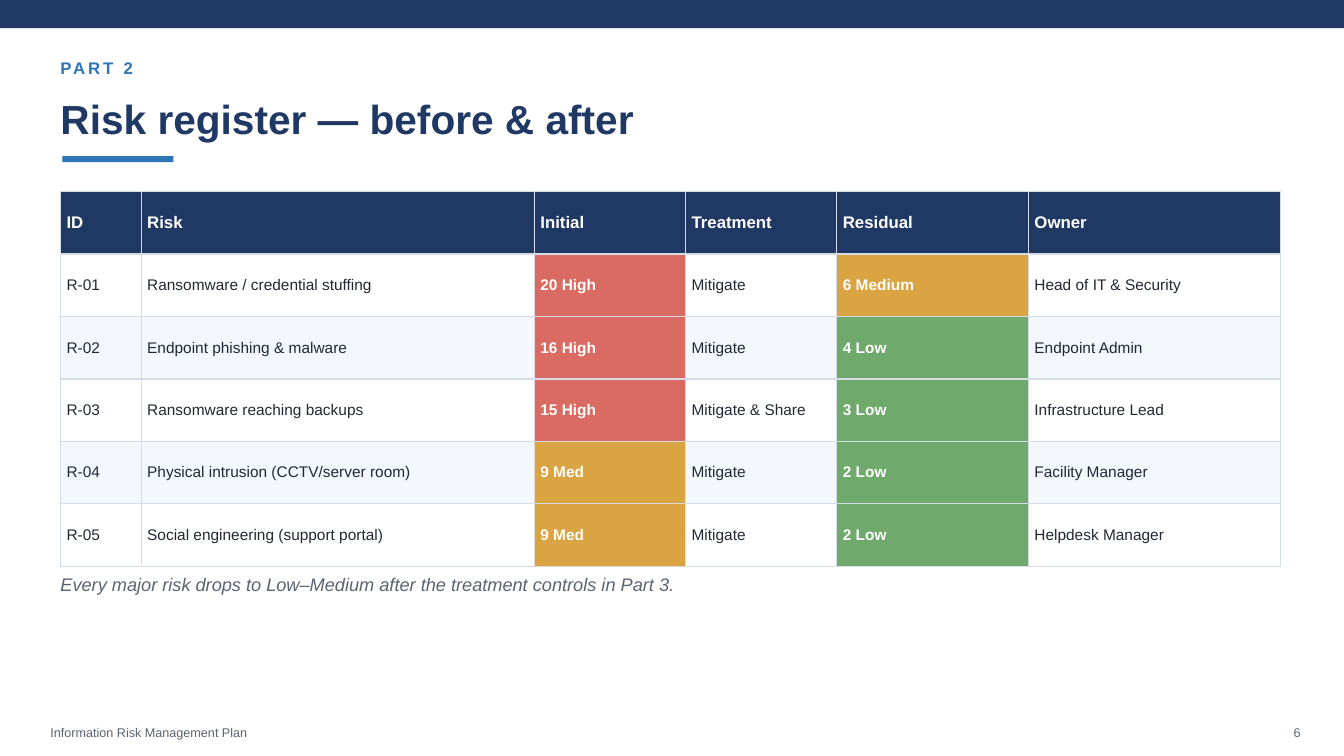
from dataclasses import dataclass

from lxml import etree
from pptx import Presentation
from pptx.dml.color import RGBColor
from pptx.enum.shapes import MSO_SHAPE
from pptx.enum.text import MSO_ANCHOR, MSO_AUTO_SIZE, PP_ALIGN
from pptx.oxml.ns import qn
from pptx.util import Inches, Pt

RECT = MSO_SHAPE.RECTANGLE
MIDDLE = MSO_ANCHOR.MIDDLE
GROW = MSO_AUTO_SIZE.SHAPE_TO_FIT_TEXT
LEFT, RIGHT = PP_ALIGN.LEFT, PP_ALIGN.RIGHT

# Content
PART = "PART 2"
TITLE = "Risk register — before & after"
TAKEAWAY = "Every major risk drops to Low–Medium after the treatment controls in Part 3."
PLAN = "Information Risk Management Plan"
PAGE = "6"
HEADINGS = ("ID", "Risk", "Initial", "Treatment", "Residual", "Owner")
RISKS = [
    ("R-01", "Ransomware / credential stuffing", "20 High", "Mitigate", "6 Medium", "Head of IT & Security"),
    ("R-02", "Endpoint phishing & malware", "16 High", "Mitigate", "4 Low", "Endpoint Admin"),
    ("R-03", "Ransomware reaching backups", "15 High", "Mitigate & Share", "3 Low", "Infrastructure Lead"),
    ("R-04", "Physical intrusion (CCTV/server room)", "9 Med", "Mitigate", "2 Low", "Facility Manager"),
    ("R-05", "Social engineering (support portal)", "9 Med", "Mitigate", "2 Low", "Helpdesk Manager"),
]
RATED = ("Initial", "Residual")


# Theme
@dataclass(frozen=True)
class Theme:
    font: str = "Arial"
    navy: str = "1F3864"
    blue: str = "2E75B6"
    ink: str = "222833"
    muted: str = "5B6472"
    white: str = "FFFFFF"
    stripe: str = "F4F7FC"
    border: str = "D5DCE6"
    high: str = "D96B63"
    medium: str = "D9A441"
    low: str = "6FA96B"
    title_size: int = 29
    takeaway_size: int = 13
    label_size: int = 12
    body_size: int = 11
    footer_size: int = 9


THEME = Theme()
RATING_FILLS = {"High": THEME.high, "Medium": THEME.medium, "Med": THEME.medium, "Low": THEME.low}

# Layout, in inches
SLIDE_W, SLIDE_H = 13.33, 7.5
MARGIN = 0.6
COLUMNS = (0.8, 3.9, 1.5, 1.5, 1.9, 2.5)
ROW_H = 0.62
TABLE_W = sum(COLUMNS)
TABLE_TOP = 1.9
TABLE_H = ROW_H * (len(RISKS) + 1)
FOOTER_TOP = SLIDE_H - 0.3
CELL_PAD = Inches(0.06)


def style(paragraph, size, color, bold=False, italic=False):
    font = paragraph.font
    font.name, font.size = THEME.font, Pt(size)
    font.bold, font.italic = bold, italic
    font.color.rgb = RGBColor.from_string(color)


def paint(fill, color):
    fill.solid()
    fill.fore_color.rgb = RGBColor.from_string(color)


def add_bar(slide, box, color):
    bar = slide.shapes.add_shape(RECT, *map(Inches, box))
    bar.shadow.inherit = False
    paint(bar.fill, color)
    bar.line.fill.background()


def add_text(slide, text, box, size, color, align=LEFT, **emphasis):
    frame = slide.shapes.add_textbox(*map(Inches, box)).text_frame
    frame.word_wrap, frame.auto_size, frame.vertical_anchor = True, GROW, MIDDLE
    frame.margin_left = frame.margin_right = frame.margin_top = frame.margin_bottom = 0
    paragraph = frame.paragraphs[0]
    paragraph.text, paragraph.alignment = text, align
    style(paragraph, size, color, **emphasis)
    return paragraph


def add_borders(cell):
    properties = cell._tc.get_or_add_tcPr()
    for index, side in enumerate(("lnL", "lnR", "lnT", "lnB")):
        line = etree.Element(qn("a:" + side), w=str(Pt(1)))
        fill = etree.SubElement(line, qn("a:solidFill"))
        etree.SubElement(fill, qn("a:srgbClr"), val=THEME.border)
        properties.insert(index, line)


def fill_cell(cell, text, size, color, background, bold):
    cell.text = text
    cell.vertical_anchor = MIDDLE
    cell.margin_left = cell.margin_right = cell.margin_top = cell.margin_bottom = CELL_PAD
    style(cell.text_frame.paragraphs[0], size, color, bold)
    paint(cell.fill, background)
    add_borders(cell)


def add_register(slide):
    box = (MARGIN, TABLE_TOP, TABLE_W, TABLE_H)
    register = slide.shapes.add_table(len(RISKS) + 1, len(HEADINGS), *map(Inches, box)).table
    for column, width in zip(register.columns, COLUMNS):
        column.width = Inches(width)
    for row in register.rows:
        row.height = Inches(ROW_H)
    for c, heading in enumerate(HEADINGS):
        fill_cell(register.cell(0, c), heading, THEME.label_size, THEME.white, THEME.navy, True)
        for r, risk in enumerate(RISKS, 1):
            rated = heading in RATED
            if rated:
                background = RATING_FILLS[risk[c].split()[-1]]
            else:
                background = THEME.white if r % 2 else THEME.stripe
            color = THEME.white if rated else THEME.ink
            fill_cell(register.cell(r, c), risk[c], THEME.body_size, color, background, rated)


def main():
    deck = Presentation()
    deck.slide_width, deck.slide_height = Inches(SLIDE_W), Inches(SLIDE_H)
    slide = deck.slides.add_slide(deck.slide_layouts[6])
    paint(slide.background.fill, THEME.white)

    # Heading
    add_bar(slide, (0, 0, SLIDE_W, 0.28), THEME.navy)
    part = add_text(slide, PART, (MARGIN, 0.58, 12, 0.19), THEME.label_size, THEME.blue, bold=True)
    part.runs[0].font._element.set("spc", "200")
    add_text(slide, TITLE, (MARGIN, 0.95, TABLE_W, 0.45), THEME.title_size, THEME.navy, bold=True)
    add_bar(slide, (MARGIN + 0.02, 1.55, 1.1, 0.06), THEME.blue)

    # Risk register and takeaway
    add_register(slide)
    takeaway_top = TABLE_TOP + TABLE_H + 0.08
    add_text(slide, TAKEAWAY, (MARGIN, takeaway_top, 11.5, 0.2), THEME.takeaway_size, THEME.muted, italic=True)

    # Footer
    add_text(slide, PLAN, (0.5, FOOTER_TOP, 10, 0.14), THEME.footer_size, THEME.muted)
    add_text(slide, PAGE, (12.4, FOOTER_TOP, 0.5, 0.14), THEME.footer_size, THEME.muted, RIGHT)

    deck.save("out.pptx")


if __name__ == "__main__":
    main()
